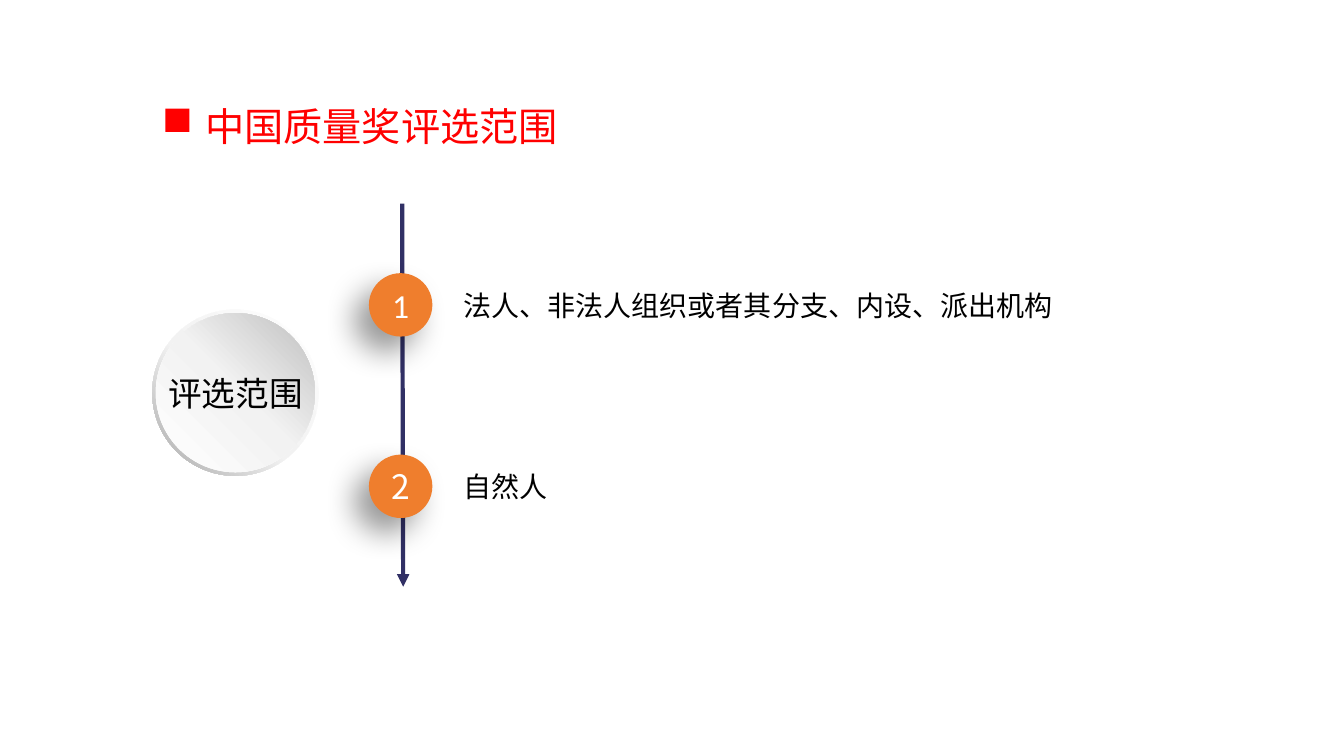
from dataclasses import dataclass

from lxml.etree import SubElement
from pptx import Presentation
from pptx.dml.color import RGBColor
from pptx.enum.shapes import MSO_CONNECTOR, MSO_SHAPE
from pptx.enum.text import MSO_ANCHOR, MSO_AUTO_SIZE, PP_ALIGN
from pptx.oxml.ns import qn
from pptx.shapes.autoshape import Shape
from pptx.text.text import TextFrame
from pptx.util import Inches, Length, Pt

RED = RGBColor(0xFF, 0x00, 0x00)
NAVY = RGBColor(0x31, 0x30, 0x65)
ORANGE = RGBColor(0xEF, 0x7E, 0x2D)
WHITE = RGBColor(0xFF, 0xFF, 0xFF)
BLACK = RGBColor(0x00, 0x00, 0x00)
PALE_GREY = RGBColor(0xF2, 0xF2, 0xF2)
MID_GREY = RGBColor(0xBF, 0xBF, 0xBF)
DARK_GREY = RGBColor(0xA6, 0xA6, 0xA6)

CJK_FONT = "Noto Sans CJK SC"

# The slide is a grid of 64 columns by 36 rows of square cells
COLUMNS, ROWS = 64, 36
SLIDE_WIDTH, SLIDE_HEIGHT = Inches(13.33), Inches(7.5)

BADGE_CENTER, BADGE_SIZE = 19.08, 3.02
SCOPE_CENTER = (11.21, 18.7)


@dataclass(frozen=True)
class ScopeItem:
    number: str
    number_font: str
    wording: str
    middle: float
    width: float


@dataclass(frozen=True)
class ScopeDisc:
    kind: MSO_SHAPE
    size: float
    stops: tuple[tuple[int, RGBColor], ...]
    angle: int  # counter-clockwise, in degrees


ITEMS = (
    ScopeItem("1", "Calibri", "法人、非法人组织或者其分支、内设、派出机构", 14.52, 32.5),
    ScopeItem("2", CJK_FONT, "自然人", 23.16, 28.6),
)
DISCS = (
    ScopeDisc(MSO_SHAPE.DONUT, 7.92, ((0, WHITE), (55, PALE_GREY), (100, DARK_GREY)), 225),
    ScopeDisc(MSO_SHAPE.OVAL, 7.58, ((0, WHITE), (51, PALE_GREY), (100, MID_GREY)), 45),
)


def col(count: float) -> Length:
    return Length(round(SLIDE_WIDTH * count / COLUMNS))


def row(count: float) -> Length:
    return Length(round(SLIDE_HEIGHT * count / ROWS))


def write(frame: TextFrame, text: str, size: int, color: RGBColor,
          align: PP_ALIGN = PP_ALIGN.LEFT, font: str = CJK_FONT) -> None:
    frame.text = text
    paragraph = frame.paragraphs[0]
    paragraph.alignment = align
    paragraph.font.size = Pt(size)
    paragraph.font.color.rgb = color
    paragraph.font.name = font
    defaults = paragraph._p.pPr.find(qn("a:defRPr"))
    SubElement(defaults, qn("a:ea"), typeface=font)


def add_plain(kind: MSO_SHAPE, left: float, top: float, width: float, height: float) -> Shape:
    shape = slide.shapes.add_shape(kind, col(left), row(top), col(width), row(height))
    shape.shadow.inherit = False
    shape.line.fill.background()
    return shape


def add_label(text: str, left: float, middle: float, width: float, height: float,
              size: int, align: PP_ALIGN = PP_ALIGN.LEFT) -> TextFrame:
    box = slide.shapes.add_textbox(col(left), row(middle - height / 2), col(width), row(height))
    frame = box.text_frame
    frame.word_wrap = True
    frame.auto_size = MSO_AUTO_SIZE.SHAPE_TO_FIT_TEXT
    frame.vertical_anchor = MSO_ANCHOR.MIDDLE
    write(frame, text, size, BLACK, align)
    return frame


def add_disc(disc: ScopeDisc) -> None:
    x, y = SCOPE_CENTER
    shape = add_plain(disc.kind, x - disc.size / 2, y - disc.size / 2, disc.size, disc.size)
    if disc.kind == MSO_SHAPE.DONUT:
        shape.adjustments[0] = 0.05
    shape.fill.gradient()
    shape.fill.gradient_angle = disc.angle
    stop_list = shape._element.spPr.find(qn("a:gradFill")).find(qn("a:gsLst"))
    for stop in list(stop_list):
        stop_list.remove(stop)
    for share, color in disc.stops:
        stop = SubElement(stop_list, qn("a:gs"), pos=str(share * 1000))
        SubElement(stop, qn("a:srgbClr"), val=str(color))


def add_item(item: ScopeItem) -> None:
    badge = add_plain(MSO_SHAPE.OVAL, BADGE_CENTER - BADGE_SIZE / 2,
                      item.middle - BADGE_SIZE / 2, BADGE_SIZE, BADGE_SIZE)
    badge.fill.solid()
    badge.fill.fore_color.rgb = ORANGE
    effects = badge._element.spPr.find(qn("a:effectLst"))
    shadow = SubElement(effects, qn("a:outerShdw"), blurRad=str(Pt(22)), dist=str(Pt(15)),
                        dir=str(135 * 60000), algn="tr", rotWithShape="0")
    shade = SubElement(shadow, qn("a:srgbClr"), val=str(BLACK))
    SubElement(shade, qn("a:alpha"), val="40000")
    badge.text_frame.vertical_anchor = MSO_ANCHOR.MIDDLE
    write(badge.text_frame, item.number, 24, WHITE, PP_ALIGN.CENTER, item.number_font)
    add_label(item.wording, 21.6, item.middle, item.width, 2.11, 20)


presentation = Presentation()
presentation.slide_width, presentation.slide_height = SLIDE_WIDTH, SLIDE_HEIGHT
slide = presentation.slides.add_slide(presentation.slide_layouts[5])

# Heading with its red marker
heading = slide.shapes.title
heading.left, heading.top, heading.width, heading.height = col(9.3), row(3.98), col(48.1), row(3.22)
heading.text_frame.vertical_anchor = MSO_ANCHOR.TOP
heading.text_frame.auto_size = MSO_AUTO_SIZE.NONE
write(heading.text_frame, "中国质量奖评选范围", 28, RED)
heading.text_frame.paragraphs[0].line_spacing = 1.3

marker = add_plain(MSO_SHAPE.RECTANGLE, 7.87, 5.18, 1.15, 1.1)
marker.fill.solid()
marker.fill.fore_color.rgb = RED

# Timeline arrow
timeline = slide.shapes.add_connector(MSO_CONNECTOR.STRAIGHT, col(19.15), row(9.7), col(19.2), row(27.94))
timeline.line.color.rgb = NAVY
timeline.line.width = Pt(3)
SubElement(timeline.line._get_or_add_ln(), qn("a:tailEnd"), type="triangle")
SubElement(timeline._element.spPr, qn("a:effectLst"))

# Round scope emblem
for scope_disc in DISCS:
    add_disc(scope_disc)
scope = add_label("评选范围", SCOPE_CENTER[0] - 3.36, SCOPE_CENTER[1], 6.72, 1.92, 24, PP_ALIGN.CENTER)
scope.margin_left = scope.margin_right = scope.margin_top = scope.margin_bottom = 0

# Numbered items
for scope_item in ITEMS:
    add_item(scope_item)

presentation.save("out.pptx")
